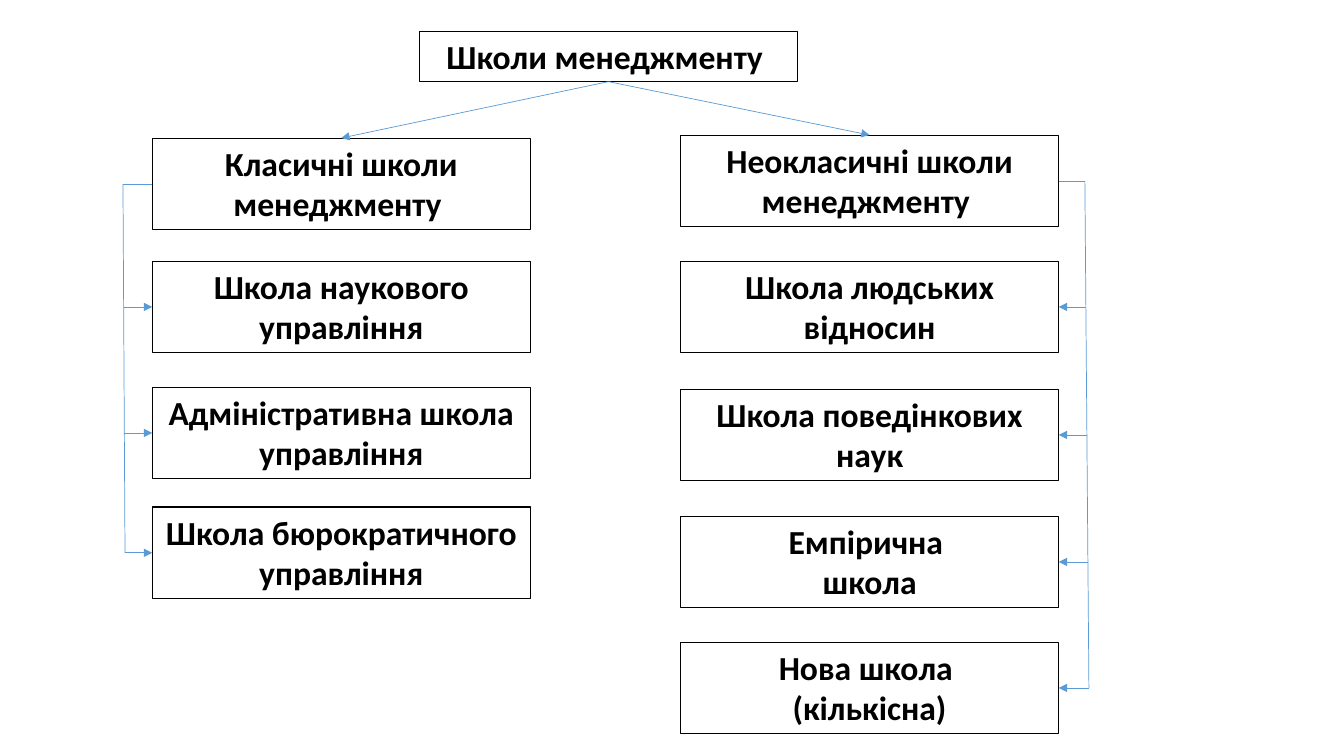
from lxml import etree
from pptx import Presentation
from pptx.dml.color import RGBColor
from pptx.enum.shapes import MSO_CONNECTOR, MSO_SHAPE
from pptx.enum.text import MSO_ANCHOR, PP_ALIGN
from pptx.oxml.ns import qn
from pptx.util import Inches, Pt

BLACK = RGBColor(0x00, 0x00, 0x00)
BLUE = RGBColor(0x5B, 0x9B, 0xD5)
RECTANGLE = MSO_SHAPE.RECTANGLE
STRAIGHT = MSO_CONNECTOR.STRAIGHT
TOP = MSO_ANCHOR.TOP
CENTER = PP_ALIGN.CENTER

TOP_SIDE, LEFT_SIDE, BOTTOM_SIDE, RIGHT_SIDE = range(4)
BOX_WIDTH = 3.75
TITLE_HEIGHT = 0.5
SCHOOL_HEIGHT = 0.91

CLASSICAL = [
    (1.37, "Класичні школи менеджменту "),
    (2.59, "Школа наукового управління"),
    (3.84, "Адміністративна школа управління"),
    (5.03, "Школа бюрократичного управління"),
]
NEOCLASSICAL = [
    (1.34, "Неокласичні школи менеджменту "),
    (2.59, "Школа людських відносин"),
    (3.86, "Школа поведінкових наук"),
    (5.12, "Емпірична \nшкола"),
    (6.37, "Нова школа \n(кількісна)"),
]


def add_box(slide, left, top, height, text):
    box = slide.shapes.add_shape(
        RECTANGLE, Inches(left), Inches(top), Inches(BOX_WIDTH), Inches(height))
    box.shadow.inherit = False
    box.fill.background()
    box.line.color.rgb = BLACK
    box.line.width = Pt(0.75)
    frame = box.text_frame
    frame.word_wrap = True
    frame.vertical_anchor = TOP
    frame.text = text
    for paragraph in frame.paragraphs:
        paragraph.alignment = CENTER
        for run in paragraph.runs:
            run.font.name = "Calibri"
            run.font.size = Pt(24)
            run.font.bold = True
            run.font.color.rgb = BLACK
    return box


def add_link(slide, start, end, arrow=False):
    """Draw a thin blue line between two (x, y) points given in EMU."""
    link = slide.shapes.add_connector(STRAIGHT, *start, *end)
    link.line.color.rgb = BLUE
    link.line.width = Pt(0.5)
    properties = link.line._get_or_add_ln()
    if arrow:
        etree.SubElement(properties, qn("a:tailEnd"), type="triangle")
    etree.SubElement(properties.getparent(), qn("a:effectLst"))
    return link


def add_school_column(slide, left, schools, side, spine_top, spine_bottom):
    """Stack the schools and tie them to a spine on one side; return the heading box."""
    boxes = [add_box(slide, left, top, SCHOOL_HEIGHT, text) for top, text in schools]
    edge = Inches(left + (BOX_WIDTH if side == RIGHT_SIDE else 0))
    middles = [box.top + box.height // 2 for box in boxes]
    spine_start, spine_end = Inches(left + spine_top), Inches(left + spine_bottom)
    add_link(slide, (spine_start, middles[0]), (spine_end, middles[-1]))
    for box, middle in zip(boxes, middles):
        share = (middle - middles[0]) / (middles[-1] - middles[0])
        spine_x = round(spine_start + share * (spine_end - spine_start))
        branch = add_link(slide, (spine_x, middle), (edge, middle), arrow=box is not boxes[0])
        branch.end_connect(box, side)
    return boxes[0]


def add_schools_diagram(slide):
    title = add_box(slide, 4.16, 0.31, TITLE_HEIGHT, "Школи менеджменту ")
    headings = [
        add_school_column(slide, 1.51, CLASSICAL, LEFT_SIDE, -0.29, -0.27),
        add_school_column(slide, 6.75, NEOCLASSICAL, RIGHT_SIDE, 4.01, 4.05),
    ]
    title_foot = (title.left + title.width // 2, title.top + title.height)
    for heading in headings:
        heading_top = (heading.left + heading.width // 2, heading.top)
        arrow = add_link(slide, title_foot, heading_top, arrow=True)
        arrow.begin_connect(title, BOTTOM_SIDE)
        arrow.end_connect(heading, TOP_SIDE)


def main():
    presentation = Presentation()
    presentation.slide_width = Inches(13.33)
    presentation.slide_height = Inches(7.5)
    slide = presentation.slides.add_slide(presentation.slide_layouts[6])
    add_schools_diagram(slide)
    presentation.save("out.pptx")


if __name__ == "__main__":
    main()
